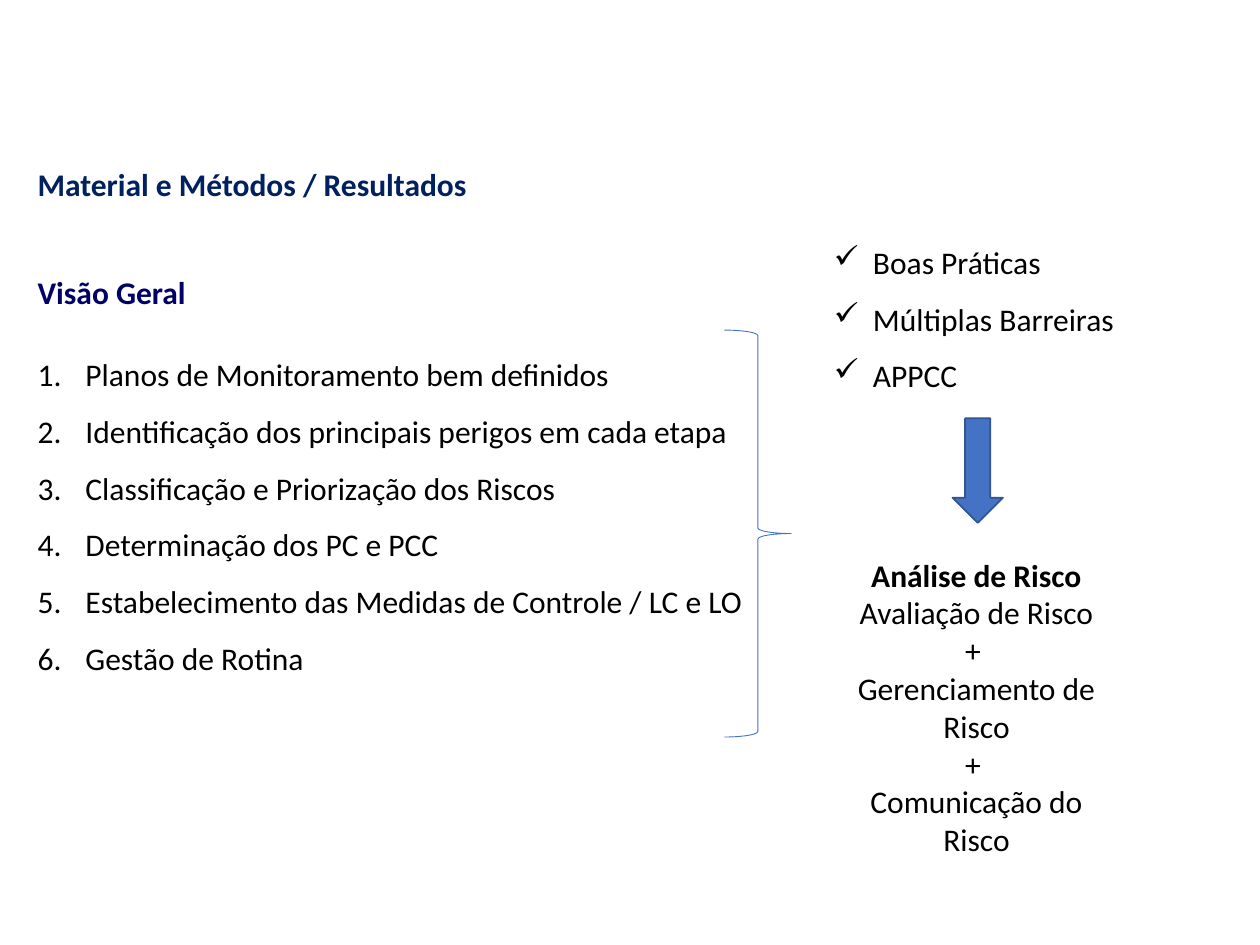
from lxml import etree
from pptx import Presentation
from pptx.dml.color import RGBColor
from pptx.enum.shapes import MSO_SHAPE
from pptx.enum.text import PP_ALIGN
from pptx.oxml.ns import qn
from pptx.util import Inches, Pt

RIGHT_BRACE, DOWN_ARROW = MSO_SHAPE.RIGHT_BRACE, MSO_SHAPE.DOWN_ARROW
LEFT, CENTER = PP_ALIGN.LEFT, PP_ALIGN.CENTER

THEME = {
    "font": "Calibri",
    "size": Pt(18),
    "text": RGBColor.from_string("000000"),
    "title": RGBColor.from_string("002060"),
    "overview": RGBColor.from_string("000066"),
    "accent": RGBColor.from_string("4472C4"),
    "arrow_line": RGBColor.from_string("325491"),
}

TITLE = "Material e Métodos / Resultados"
OVERVIEW = "Visão Geral"
STEPS = [
    "Planos de Monitoramento bem definidos",
    "Identificação dos principais perigos em cada etapa",
    "Classificação e Priorização dos Riscos",
    "Determinação dos PC e PCC",
    "Estabelecimento das Medidas de Controle / LC e LO",
    "Gestão de Rotina",
]
TOOLS = ["Boas Práticas", "Múltiplas Barreiras", "APPCC"]
ANALYSIS = "Análise de Risco"
ANALYSIS_PARTS = ["Avaliação de Risco", "+ ", "Gerenciamento de Risco", "+ ", "Comunicação do Risco"]

NUMBERED = ("a:buAutoNum", {"type": "arabicPeriod"}, 0.38)
CHECKED = ("a:buChar", {"char": "✓"}, 0.31)

LEFT_COLUMN, RIGHT_COLUMN = 0.2, 6.52


def add_bullet(paragraph, marker):
    tag, attributes, indent = marker
    properties = paragraph._p.get_or_add_pPr()
    properties.set("marL", str(Inches(indent)))
    properties.set("indent", str(-Inches(indent)))
    etree.SubElement(properties, qn(tag), attributes)


def add_text(slide, box, lines, color="text", bold_lines=0, align=LEFT,
             spacing=None, marker=None, wrap=True):
    frame = slide.shapes.add_textbox(*map(Inches, box)).text_frame
    frame.word_wrap = wrap
    for index, line in enumerate(lines):
        paragraph = frame.add_paragraph() if index else frame.paragraphs[0]
        paragraph.text = line
        paragraph.alignment = align
        if spacing:
            paragraph.line_spacing = spacing
        if marker:
            add_bullet(paragraph, marker)
        font = paragraph.font
        font.name, font.size = THEME["font"], THEME["size"]
        font.bold = index < bold_lines
        font.color.rgb = THEME[color]


def add_outline(slide, preset, box, line_color, line_width):
    shape = slide.shapes.add_shape(preset, *map(Inches, box))
    shape.shadow.inherit = False
    shape.line.color.rgb = THEME[line_color]
    shape.line.width = Pt(line_width)
    return shape


def main():
    deck = Presentation()
    deck.slide_width, deck.slide_height = Inches(10), Inches(7.5)
    slide = deck.slides.add_slide(deck.slide_layouts[6])

    brace = add_outline(slide, RIGHT_BRACE, (5.75, 2.62, 0.53, 3.23), "accent", 0.5)
    brace.fill.background()
    add_text(slide, (RIGHT_COLUMN, 1.73, 2.48, 1.92), TOOLS, spacing=1.5, marker=CHECKED)
    add_text(slide, (RIGHT_COLUMN, 4.36, 2.46, 2.52), [ANALYSIS, *ANALYSIS_PARTS],
             bold_lines=1, align=CENTER)
    arrow = add_outline(slide, DOWN_ARROW, (7.56, 3.32, 0.4, 0.83), "arrow_line", 1)
    arrow.fill.solid()
    arrow.fill.fore_color.rgb = THEME["accent"]
    add_text(slide, (LEFT_COLUMN, 2.62, 5.82, 3.28), STEPS, spacing=1.5, marker=NUMBERED)
    add_text(slide, (LEFT_COLUMN, 1.97, 1.39, 0.56), [OVERVIEW], "overview",
             bold_lines=1, spacing=1.5, wrap=False)
    add_text(slide, (LEFT_COLUMN, 1.26, 3.69, 0.4), [TITLE], "title",
             bold_lines=1, wrap=False)

    deck.save("out.pptx")


if __name__ == "__main__":
    main()
